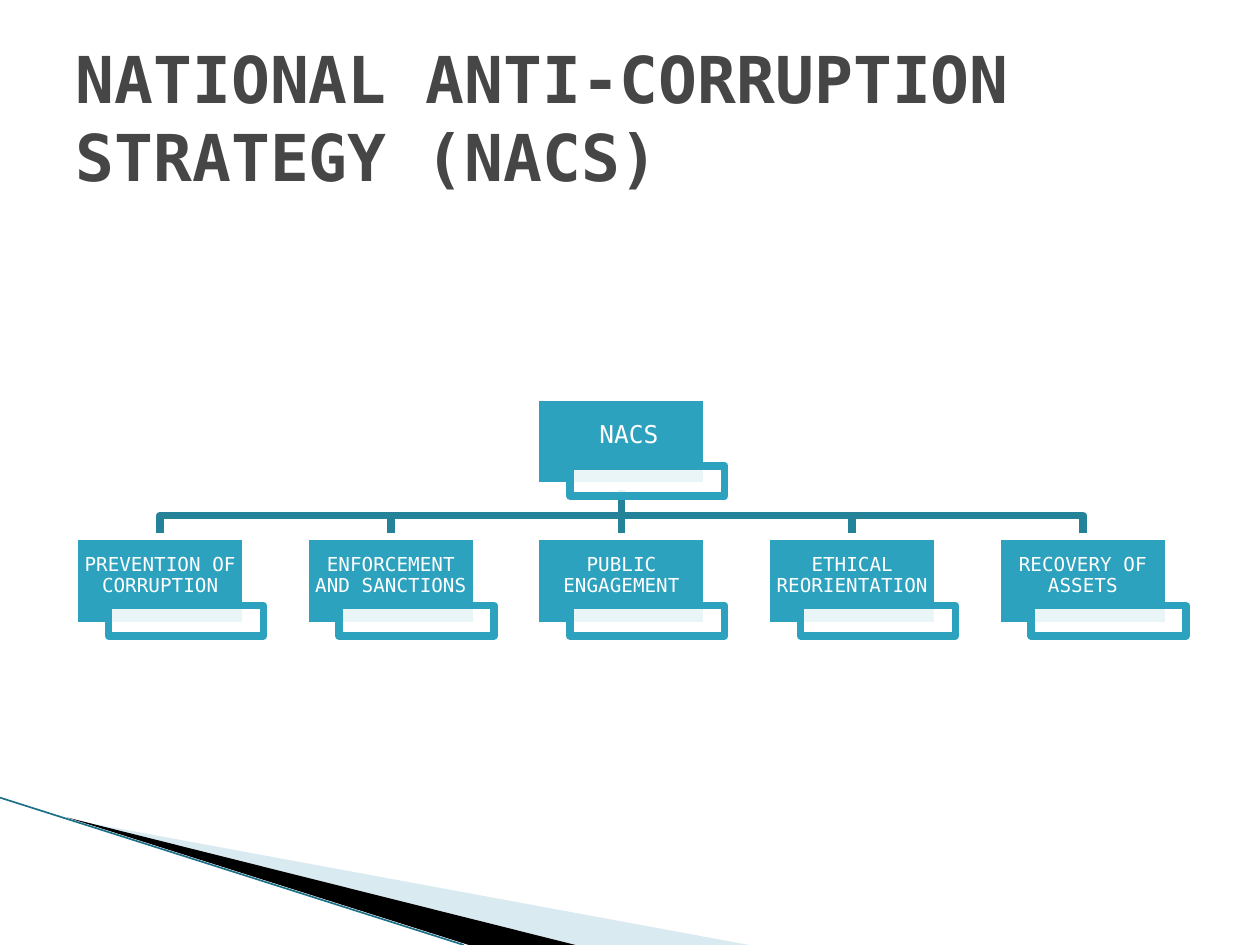
from lxml.etree import SubElement
from pptx import Presentation
from pptx.dml.color import RGBColor
from pptx.enum.shapes import MSO_CONNECTOR, MSO_SHAPE
from pptx.enum.text import MSO_ANCHOR, PP_ALIGN
from pptx.oxml.ns import qn
from pptx.util import Cm, Pt

FONT = "DejaVu Sans Mono"
TEAL, DARK_TEAL, WHITE = "2DA2BF", "248299", "FFFFFF"


def paint(shape, fill=None, line=None, width=4.33, opacity=100):
    """Set fill, opacity in percent and line, without a shadow."""
    shape.shadow.inherit = False
    if fill:
        shape.fill.solid()
        shape.fill.fore_color.rgb = RGBColor.from_string(fill)
        if opacity < 100:
            color = shape.fill._xPr.find(qn("a:solidFill"))[0]
            SubElement(color, qn("a:alpha"), val=str(opacity * 1000))
    else:
        shape.fill.background()
    if line:
        shape.line.color.rgb = RGBColor.from_string(line)
        shape.line.width = Pt(width)
    else:
        shape.line.fill.background()


def draw_line(x1, y1, x2, y2, color, width):
    connector = slide.shapes.add_connector(
        MSO_CONNECTOR.STRAIGHT, Cm(x1), Cm(y1), Cm(x2), Cm(y2))
    connector.line.color.rgb = RGBColor.from_string(color)
    connector.line.width = Pt(width)
    SubElement(connector._element.spPr, qn("a:effectLst"))


presentation = Presentation()
presentation.slide_width, presentation.slide_height = Cm(25.4), Cm(19.05)
slide = presentation.slides.add_slide(presentation.slide_layouts[5])

# Title
title = slide.shapes.title
title.left, title.top, title.width, title.height = Cm(1.27), Cm(0.76), Cm(22.86), Cm(3.18)
title.text_frame.word_wrap = True
title.text_frame.vertical_anchor = MSO_ANCHOR.MIDDLE
paragraph = title.text_frame.paragraphs[0]
paragraph.alignment = PP_ALIGN.LEFT
run = paragraph.add_run()
run.text = "NATIONAL ANTI-CORRUPTION STRATEGY (NACS)"
run.font.name, run.font.size, run.font.bold = FONT, Pt(36.9), True
run.font.color.rgb = RGBColor.from_string("464646")

# Corner wedges and edge line
wedges = [
    ([(1.4, 16.52), (15.1, 19.05), (11.58, 19.05)], "A0CBDC", 40),
    ([(1.35, 16.48), (11.6, 19.05), (9.45, 19.05)], "000000", 100),
]
for points, color, opacity in wedges:
    corners = [(Cm(x), Cm(y)) for x, y in points]
    builder = slide.shapes.build_freeform(*corners[0])
    builder.add_line_segments(corners[1:], close=True)
    paint(builder.convert_to_shape(), color, opacity=opacity)
draw_line(0, 16.08, 9.35, 19.05, "1C7188", 0.95)

# Chart grid
BOX_WIDTH, BOX_HEIGHT = 3.46, 1.8
ROOT_TOP, BRANCH_TOP, BUS_Y = 8, 10.82, 10.39
columns = [1.5 + 4.65 * index for index in range(5)]
root_left = columns[2]
root_center = root_left + BOX_WIDTH / 2
trunk_top = ROOT_TOP + BOX_HEIGHT

# Elbows from the root to the outer branches, straight line to the middle one
for left in columns:
    center = left + BOX_WIDTH / 2
    if left == root_left:
        draw_line(center, trunk_top, center, BRANCH_TOP, DARK_TEAL, 4.33)
        continue
    builder = slide.shapes.build_freeform(Cm(root_center), Cm(trunk_top))
    builder.add_line_segments(
        [(Cm(root_center), Cm(BUS_Y)), (Cm(center), Cm(BUS_Y)), (Cm(center), Cm(BRANCH_TOP))],
        close=False)
    paint(builder.convert_to_shape(), line=DARK_TEAL)

# Boxes, each with an empty label plate
branches = ["PREVENTION OF CORRUPTION", "ENFORCEMENT AND SANCTIONS", "PUBLIC ENGAGEMENT",
            "ETHICAL REORIENTATION", "RECOVERY OF ASSETS"]
boxes = [(" NACS", root_left, ROOT_TOP, 14)]
boxes += [(text, left, BRANCH_TOP, 11) for text, left in zip(branches, columns)]
for text, left, top, size in boxes:
    box = slide.shapes.add_shape(
        MSO_SHAPE.RECTANGLE, Cm(left), Cm(top), Cm(BOX_WIDTH), Cm(BOX_HEIGHT))
    paint(box, TEAL, WHITE)
    frame = box.text_frame
    frame.word_wrap = True
    frame.vertical_anchor = MSO_ANCHOR.MIDDLE
    frame.margin_left = frame.margin_right = frame.margin_top = Cm(0.03)
    frame.margin_bottom = Cm(0.25)
    paragraph = frame.paragraphs[0]
    paragraph.alignment = PP_ALIGN.CENTER
    paragraph.line_spacing = 0.9
    run = paragraph.add_run()
    run.text = text
    run.font.name, run.font.size = FONT, Pt(size)
    run.font.color.rgb = RGBColor.from_string(WHITE)

    plate = slide.shapes.add_shape(
        MSO_SHAPE.RECTANGLE, Cm(left + 0.69), Cm(top + 1.39), Cm(3.12), Cm(0.61))
    paint(plate, WHITE, TEAL, opacity=90)

presentation.save("out.pptx")
